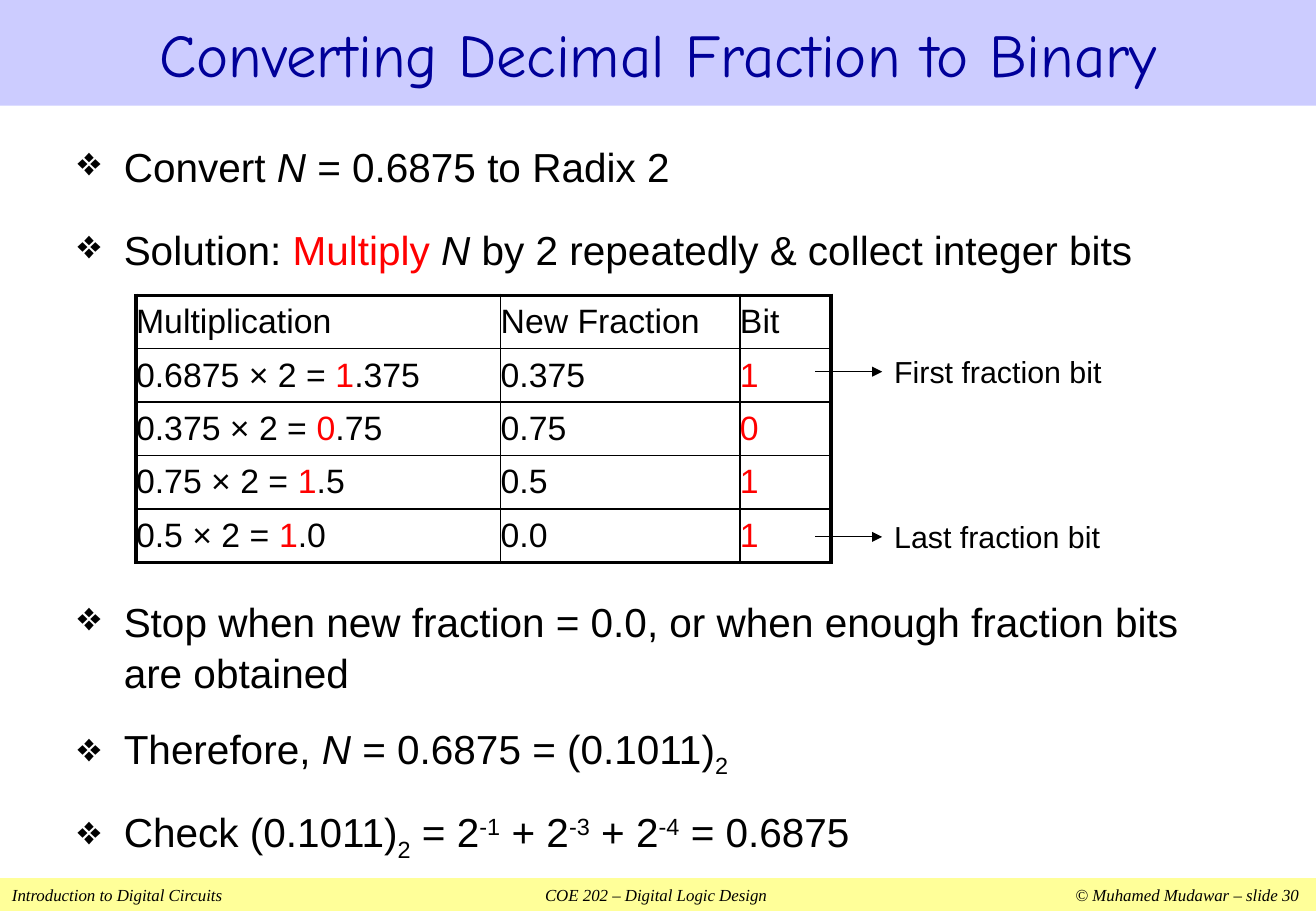
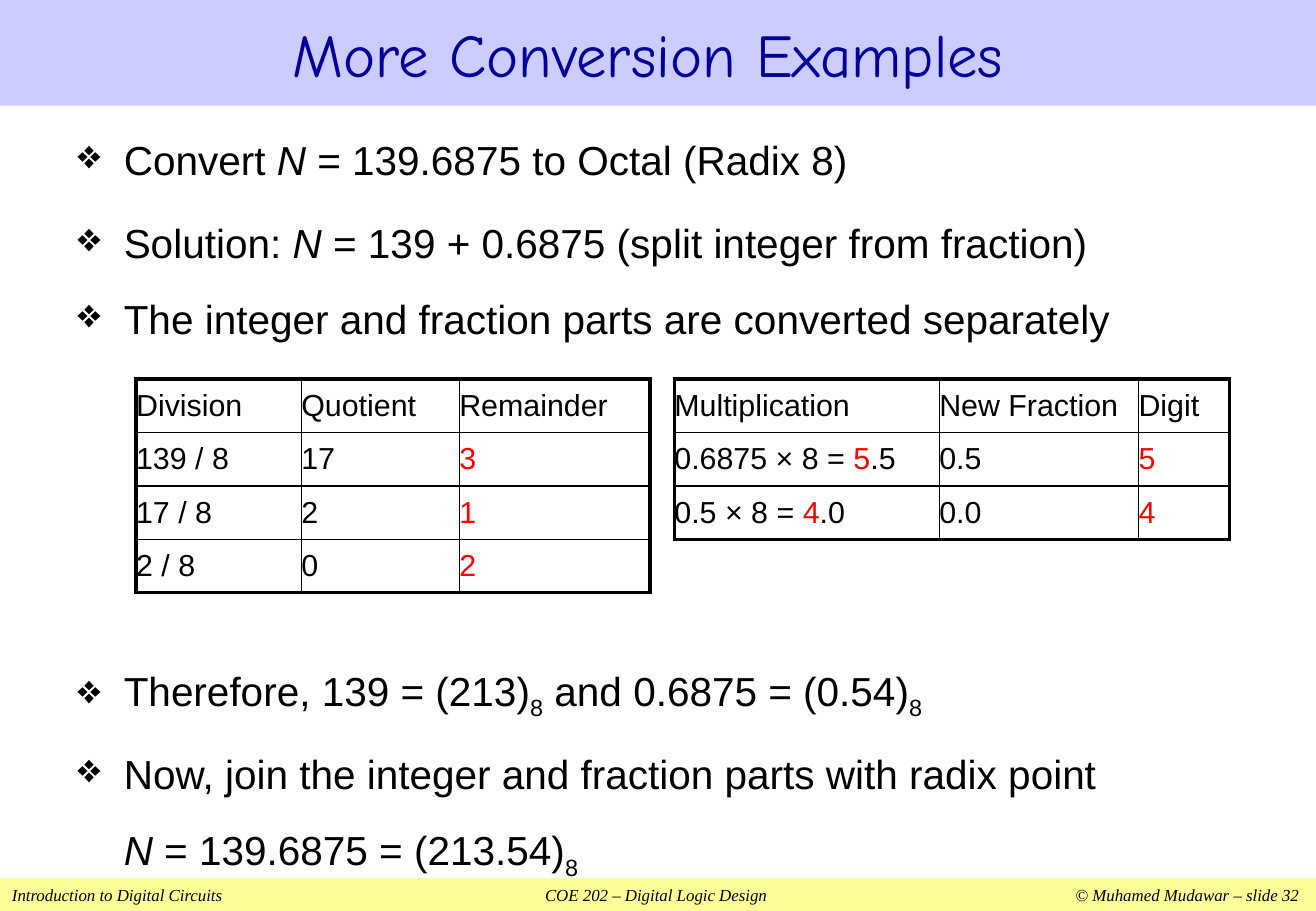
from dataclasses import dataclass
from typing import NamedTuple

from lxml.etree import SubElement
from pptx import Presentation
from pptx.dml.color import RGBColor as RGB
from pptx.enum.shapes import MSO_CONNECTOR as CONN, MSO_SHAPE as SHAPE
from pptx.enum.text import MSO_ANCHOR as ANCHOR, PP_ALIGN as ALIGN
from pptx.oxml.ns import qn
from pptx.util import Inches, Pt


@dataclass(frozen=True)
class Theme:
    title_band: RGB = RGB(0xCC, 0xCC, 0xFF)
    title_ink: RGB = RGB(0x00, 0x00, 0x99)
    footer_band: RGB = RGB(0xFF, 0xFF, 0x99)
    ink: RGB = RGB(0x00, 0x00, 0x00)
    accent: RGB = RGB(0xFF, 0x00, 0x00)
    title_font: str = "Comic Neue"
    body_font: str = "Arial"
    footer_font: str = "Times New Roman"
    title_size: float = 36
    body_size: float = 24
    label_size: float = 18
    footer_size: float = 10
    outer_line: float = 2.25
    inner_line: float = 1
    arrow_line: float = 0.75
    line_spacing: float = 1.05


class Run(NamedTuple):
    text: str
    color: RGB | None = None
    italic: bool = False
    baseline: int = 0


Text = tuple[str | Run, ...]


class Line(NamedTuple):
    runs: Text
    before: float = 15
    bullet: bool = True


class Grid(NamedTuple):
    left: float
    top: float
    cols: tuple[float, ...]
    size: float
    rows: tuple[tuple[Text, ...], ...]


class Callout(NamedTuple):
    text: str
    y: float


class Page(NamedTuple):
    title: str
    title_inset: float
    number: int
    body_top: float
    body_height: float
    lines: tuple[Line, ...]
    grids: tuple[Grid, ...]
    callouts: tuple[Callout, ...] = ()


T = Theme()
WIDTH, HEIGHT = 10.83, 7.5
TITLE_H, FOOTER_H = 0.87, 0.27
ROW_H = 0.44
INDENT = 0.38
TABLE_GAP = 190
ARROW_X, LABEL_X, LABEL_W, LABEL_H = 6.71, 7.26, 2.18, 0.4
N = Run("N", italic=True)


def red(text: str) -> Run:
    return Run(text, color=T.accent)


def sub(text: str) -> Run:
    return Run(text, baseline=-25)


def sup(text: str) -> Run:
    return Run(text, baseline=30)


def product(left: str, digit: str, rest: str, fraction: str) -> tuple[Text, ...]:
    return (left, red(digit), rest), (fraction,), (red(digit),)


def division(left: str, quotient: str, remainder: str) -> tuple[Text, ...]:
    return (left,), (quotient,), (red(remainder),)


def add_runs(p, runs: Text, font: str, size: float, color: RGB = T.ink) -> None:
    for item in runs:
        run = Run(item) if isinstance(item, str) else item
        r = p.add_run()
        r.text = run.text
        r.font.name, r.font.size = font, Pt(size)
        r.font.color.rgb = run.color or color
        r.font.italic = run.italic
        if run.baseline:
            r._r.get_or_add_rPr().set("baseline", str(run.baseline * 1000))


def add_band(s, top: float, height: float, fill: RGB, inset: float):
    sp = s.shapes.add_shape(SHAPE.RECTANGLE, 0, Inches(top), Inches(WIDTH), Inches(height))
    sp.shadow.inherit = False
    sp.fill.solid()
    sp.fill.fore_color.rgb = fill
    sp.line.fill.background()
    tf = sp.text_frame
    tf.word_wrap = True
    tf.vertical_anchor = ANCHOR.MIDDLE
    tf.margin_left = tf.margin_right = Inches(inset)
    return tf.paragraphs[0]


def add_footer(s, number: int) -> None:
    p = add_band(s, HEIGHT - FOOTER_H, FOOTER_H, T.footer_band, 0.1)
    p.alignment = ALIGN.LEFT
    tabs = SubElement(p._p.get_or_add_pPr(), qn("a:tabLst"))
    for pos, align in ((5.3, "ctr"), (10.59, "r")):
        SubElement(tabs, qn("a:tab"), pos=str(Inches(pos)), algn=align)
    text = ("Introduction to Digital Circuits\tCOE 202 – Digital Logic Design"
            f"\t© Muhamed Mudawar – slide {number}")
    add_runs(p, (Run(text, italic=True),), T.footer_font, T.footer_size)


def add_title(s, text: str, inset: float) -> None:
    p = add_band(s, 0, TITLE_H, T.title_band, inset)
    p.alignment = ALIGN.CENTER
    add_runs(p, (text,), T.title_font, T.title_size, T.title_ink)


def add_textbox(s, left: float, top: float, width: float, height: float):
    sp = s.shapes.add_textbox(Inches(left), Inches(top), Inches(width), Inches(height))
    sp.text_frame.word_wrap = True
    return sp


def add_body(s, page: Page) -> None:
    tf = add_textbox(s, 0.54, page.body_top, 9.75, page.body_height).text_frame
    for i, line in enumerate(page.lines):
        p = tf.add_paragraph() if i else tf.paragraphs[0]
        p.line_spacing = T.line_spacing
        p.space_before = Pt(line.before if i else 0)
        pPr = p._p.get_or_add_pPr()
        pPr.set("marL", str(Inches(INDENT)))
        if line.bullet:
            pPr.set("indent", str(-Inches(INDENT)))
            SubElement(pPr, qn("a:buChar"), char="❖")
        add_runs(p, line.runs, T.body_font, T.body_size)


def add_borders(cell, outer: dict[str, bool]) -> None:
    tcPr = cell._tc.get_or_add_tcPr()
    for i, (side, is_outer) in enumerate(outer.items()):
        width = T.outer_line if is_outer else T.inner_line
        ln = SubElement(tcPr, qn(f"a:ln{side}"), w=str(Pt(width)))
        fill = SubElement(ln, qn("a:solidFill"))
        SubElement(fill, qn("a:srgbClr"), val=str(T.ink))
        tcPr.insert(i, ln)


def add_grid(s, grid: Grid) -> None:
    n_rows, n_cols = len(grid.rows), len(grid.cols)
    table = s.shapes.add_table(n_rows, n_cols, Inches(grid.left), Inches(grid.top),
                               Inches(sum(grid.cols)), Inches(ROW_H * n_rows)).table
    table.first_row = table.horz_banding = False
    for col, width in zip(table.columns, grid.cols):
        col.width = Inches(width)
    for i, row in enumerate(grid.rows):
        table.rows[i].height = Inches(ROW_H)
        for j, runs in enumerate(row):
            cell = table.cell(i, j)
            cell.margin_left = cell.margin_right = cell.margin_top = cell.margin_bottom = 0
            cell.vertical_anchor = ANCHOR.MIDDLE
            cell.fill.background()
            add_borders(cell, {"L": j == 0, "R": j == n_cols - 1,
                               "T": i == 0, "B": i == n_rows - 1})
            add_runs(cell.text_frame.paragraphs[0], runs, T.body_font, grid.size)


def add_callout(s, callout: Callout) -> None:
    label = add_textbox(s, LABEL_X, callout.y - LABEL_H / 2, LABEL_W, LABEL_H)
    add_runs(label.text_frame.paragraphs[0], (callout.text,), T.body_font, T.label_size)
    y = Inches(callout.y)
    arrow = s.shapes.add_connector(CONN.STRAIGHT, Inches(ARROW_X), y, Inches(LABEL_X), y)
    arrow.end_connect(label, 1)
    arrow.line.color.rgb = T.ink
    arrow.line.width = Pt(T.arrow_line)
    SubElement(arrow.line._get_or_add_ln(), qn("a:tailEnd"), type="triangle")
    SubElement(arrow._element.spPr, qn("a:effectLst"))


PAGES = (
    Page(
        "Converting Decimal Fraction to Binary", 0, 30, 1.1, 5.92,
        lines=(
            Line(("Convert ", N, " = 0.6875 to Radix 2")),
            Line(("Solution: ", red("Multiply "), Run("N ", italic=True),
                  "by 2 repeatedly & collect integer bits"), before=19),
            Line(("Stop when new fraction = 0.0, or when enough fraction bits are obtained",),
                 before=TABLE_GAP),
            Line(("Therefore, ", N, " = 0.6875 = (0.1011)", sub("2"))),
            Line(("Check (0.1011)", sub("2"), " = 2", sup("-1"), " + 2", sup("-3"),
                  " + 2", sup("-4"), " = 0.6875")),
        ),
        grids=(
            Grid(1.12, 2.43, (3, 1.97, 0.75), 20, (
                (("Multiplication",), ("New Fraction",), ("Bit",)),
                product("0.6875 × 2 = ", "1", ".375", "0.375"),
                product("0.375 × 2 = ", "0", ".75", "0.75"),
                product("0.75 × 2 = ", "1", ".5", "0.5"),
                product("0.5 × 2 = ", "1", ".0", "0.0"),
            )),
        ),
        callouts=(Callout("First fraction bit", 3.06), Callout("Last fraction bit", 4.42)),
    ),
    Page(
        "More Conversion Examples ", 0.1, 32, 1.04, 6.11,
        lines=(
            Line(("Convert ", N, " = 139.6875 to Octal (Radix 8)")),
            Line(("Solution: ", N, " = 139 + 0.6875 (split integer from fraction)"), before=19),
            Line(("The integer and fraction parts are converted separately",)),
            Line(("Therefore, 139 = (213)", sub("8"), " and 0.6875 = (0.54)", sub("8")),
                 before=TABLE_GAP),
            Line(("Now, join the integer and fraction parts with radix point",)),
            Line((N, " = 139.6875 = (213.54)", sub("8")), bullet=False),
        ),
        grids=(
            Grid(5.55, 3.12, (2.18, 1.64, 0.75), 18, (
                (("Multiplication",), ("New Fraction",), ("Digit",)),
                product("0.6875 × 8 = ", "5", ".5", "0.5"),
                product("0.5 × 8 = ", "4", ".0", "0.0"),
            )),
            Grid(1.12, 3.12, (1.36, 1.3, 1.57), 18, (
                (("Division",), ("Quotient",), ("Remainder",)),
                division("139 / 8", "17", "3"),
                division("17 / 8", "2", "1"),
                division("2 / 8", "0", "2"),
            )),
        ),
    ),
)


def main() -> None:
    prs = Presentation()
    prs.slide_width, prs.slide_height = Inches(WIDTH), Inches(HEIGHT)
    for page in PAGES:
        s = prs.slides.add_slide(prs.slide_layouts[6])
        add_footer(s, page.number)
        add_title(s, page.title, page.title_inset)
        add_body(s, page)
        for grid in page.grids:
            add_grid(s, grid)
        for callout in page.callouts:
            add_callout(s, callout)
    prs.save("out.pptx")


if __name__ == "__main__":
    main()
